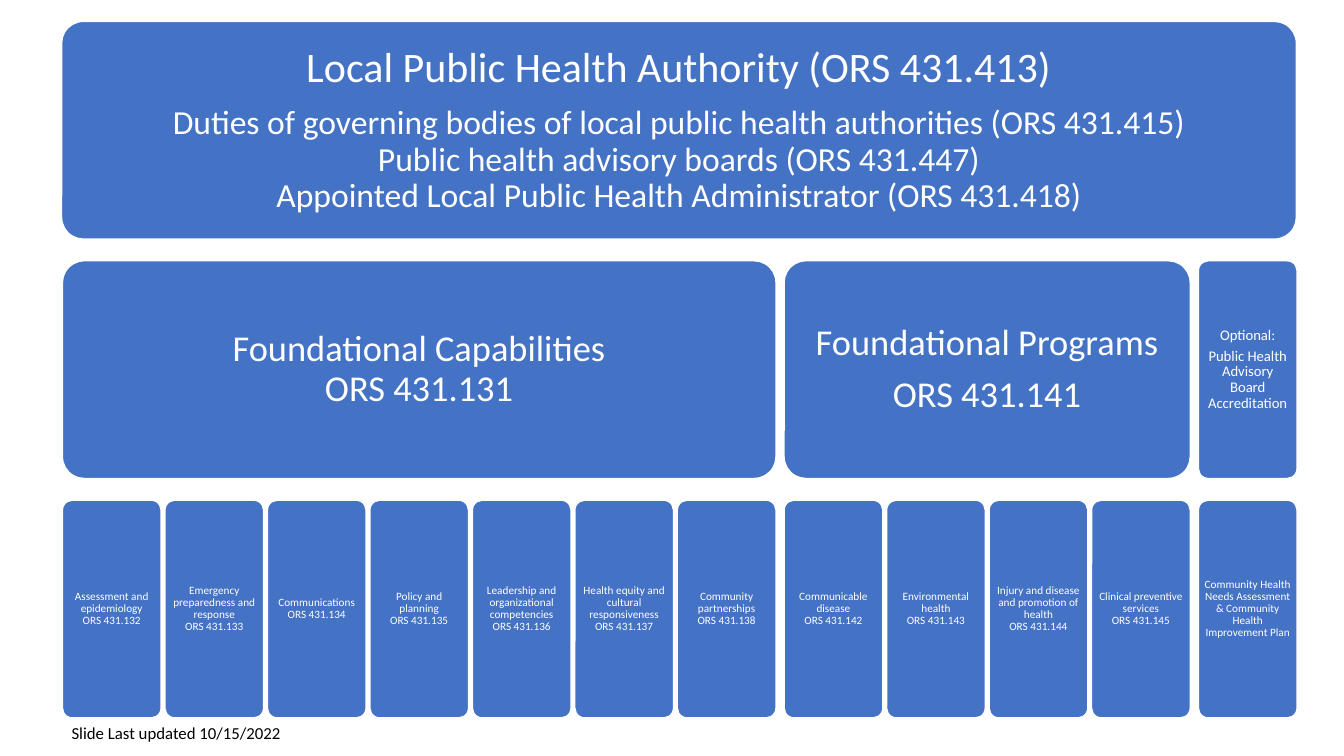
import copy
from dataclasses import dataclass

from pptx import Presentation
from pptx import util as u
from pptx.dml.color import RGBColor
from pptx.enum import shapes, text
from pptx.oxml.ns import qn

Pt = u.Pt
BLUE = RGBColor(0x44, 0x72, 0xC4)
WHITE = RGBColor(0xFF, 0xFF, 0xFF)
BLACK = RGBColor(0x00, 0x00, 0x00)

# Grid, in points
LEFT, TOP = 44.6, 15.3
ROW_HEIGHT, ROW_PITCH = 155.5, 171
CARD_WIDTH, CARD_GAP, GROUP_GAP = 70.5, 2.7, 5.8
HEADER_WIDTH = 882
CARD_SIZE, CARD_INSET = 8, 2.4


@dataclass
class Group:
    heading: list[str]
    size: float
    inset: float
    cards: list[str]

    @property
    def width(self) -> float:
        return len(self.cards) * (CARD_WIDTH + CARD_GAP) - CARD_GAP


TITLE = [
    ("Local Public Health Authority (ORS 431.413)", 30),
    ("Duties of governing bodies of local public health authorities (ORS 431.415)\n"
     "Public health advisory boards (ORS 431.447)\n"
     "Appointed Local Public Health Administrator (ORS 431.418)", 24),
]

GROUPS = [
    Group(["Foundational Capabilities\nORS 431.131"], 26, 7.8, [
        "Assessment and epidemiology\nORS 431.132",
        "Emergency preparedness and response\nORS 431.133",
        "Communications\nORS 431.134",
        "Policy and planning\nORS 431.135",
        "Leadership and organizational competencies\nORS 431.136",
        "Health equity and cultural responsiveness\nORS 431.137",
        "Community partnerships\nORS 431.138",
    ]),
    Group(["Foundational Programs", "ORS 431.141"], 26, 7.8, [
        "Communicable disease\nORS 431.142",
        "Environmental health\nORS 431.143",
        "Injury and disease and promotion of health\nORS 431.144",
        "Clinical preventive services\nORS 431.145",
    ]),
    Group(["Optional:", "Public Health Advisory Board Accreditation"], 10.5, 3.15, [
        "Community Health Needs Assessment & Community Health Improvement Plan",
    ]),
]


def write(sp, lines: list[tuple[str, float]], inset: float) -> None:
    """Fill a shape with centred white paragraphs of the given sizes."""
    tf = sp.text_frame
    frame = {"word_wrap": True, "auto_size": text.MSO_AUTO_SIZE.NONE,
             "vertical_anchor": text.MSO_ANCHOR.MIDDLE}
    frame.update({f"margin_{side}": Pt(inset) for side in ("left", "right", "top", "bottom")})
    for name, value in frame.items():
        setattr(tf, name, value)
    for i, (words, size) in enumerate(lines):
        p = tf.paragraphs[0] if i == 0 else tf.add_paragraph()
        p.text = words
        layout = {"alignment": text.PP_ALIGN.CENTER, "line_spacing": 0.9,
                  "space_before": Pt(0), "space_after": Pt(0.35 * size)}
        for name, value in layout.items():
            setattr(p, name, value)
        format_runs(p, size, WHITE)


def format_runs(p, size: float, color: RGBColor) -> None:
    for r in p.runs:
        for name, value in {"name": "Calibri", "size": Pt(size)}.items():
            setattr(r.font, name, value)
        r.font.color.rgb = color
    # Line breaks need the text size too, or they stretch the line
    for br in p._p.findall(qn("a:br")):
        br.append(copy.deepcopy(p.runs[0].font._element))


def add_box(s, x: float, row: int, width: float):
    sp = s.shapes.add_shape(shapes.MSO_SHAPE.ROUNDED_RECTANGLE,
                            Pt(x), Pt(TOP + row * ROW_PITCH), Pt(width), Pt(ROW_HEIGHT))
    sp.adjustments[0] = 0.1
    sp.shadow.inherit = False
    sp.fill.solid()
    sp.fill.fore_color.rgb = BLUE
    sp.line.color.rgb = WHITE
    sp.line.width = Pt(1)
    return sp


def add_header(s) -> None:
    box = add_box(s, LEFT - 0.6, 0, HEADER_WIDTH)
    title = s.shapes.title
    # Bring the title in front of its box
    box._element.addnext(title._element)
    for name in ("left", "top", "width", "height"):
        setattr(title, name, getattr(box, name))
    write(title, TITLE, 12.6)


def add_group(s, group: Group, x: float) -> None:
    heading = add_box(s, x, 1, group.width)
    write(heading, [(line, group.size) for line in group.heading], group.inset)
    for i, card in enumerate(group.cards):
        sp = add_box(s, x + i * (CARD_WIDTH + CARD_GAP), 2, CARD_WIDTH)
        write(sp, [(card, CARD_SIZE)], CARD_INSET)


def add_update_note(s) -> None:
    tf = s.shapes.add_textbox(Pt(44), Pt(512.6), Pt(289.4), Pt(21.8)).text_frame
    tf.word_wrap = True
    tf.text = "Slide Last updated 10/15/2022"
    format_runs(tf.paragraphs[0], 12, BLACK)


def main() -> None:
    prs = Presentation()
    prs.slide_width, prs.slide_height = Pt(960), Pt(540)
    s = prs.slides.add_slide(prs.slide_layouts[5])

    # Authority across the top
    add_header(s)

    # Groups with their cards below
    x = LEFT
    for group in GROUPS:
        add_group(s, group, x)
        x += group.width + GROUP_GAP

    # Date of last update
    add_update_note(s)
    prs.save("out.pptx")


if __name__ == "__main__":
    main()
